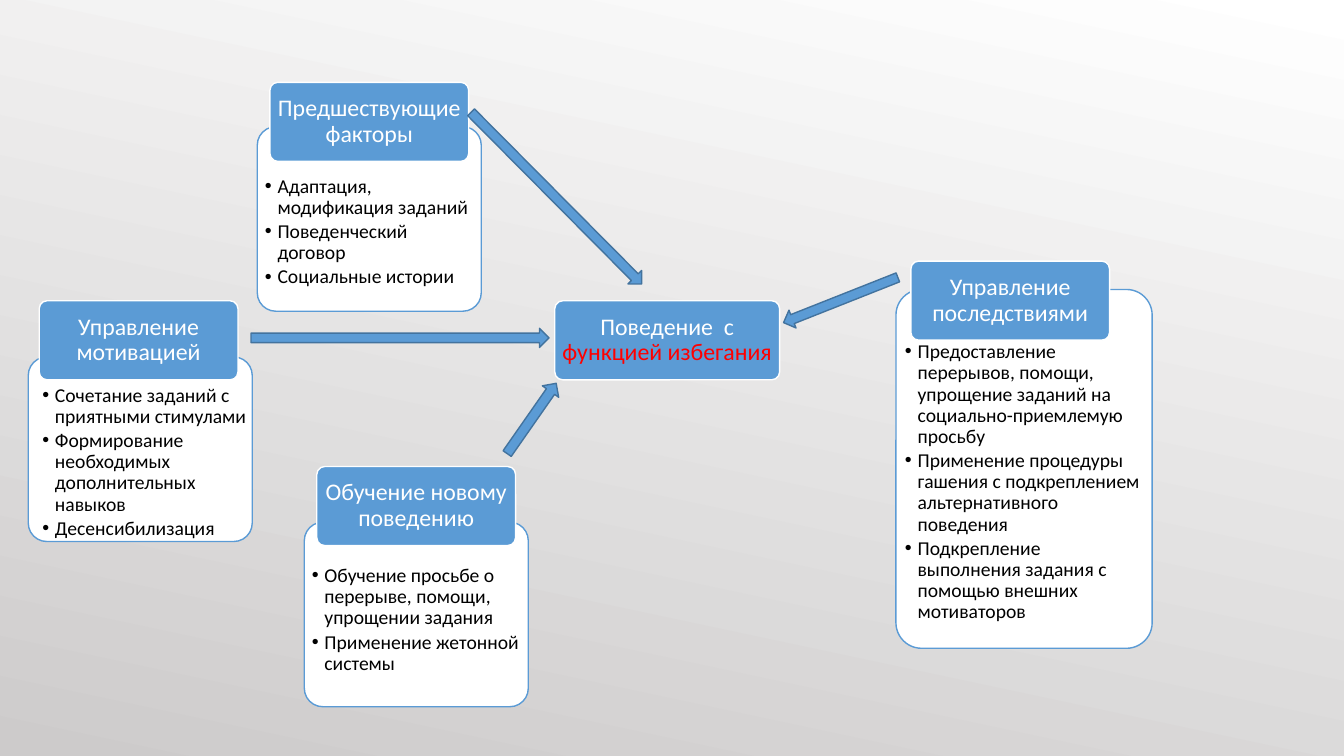
from pptx import Presentation
from pptx.dml.color import RGBColor
from pptx.enum.shapes import MSO_SHAPE
from pptx.enum.text import MSO_ANCHOR, PP_ALIGN
from pptx.oxml.ns import qn
from pptx.util import Pt
from lxml.etree import SubElement


def rgb(code):
    return RGBColor.from_string(code)


class Diagram:
    font = "Calibri"
    blue, edge, white, black, red = "5B9BD5", "43739E", "FFFFFF", "000000", "FF0000"
    header_size = 142, 56.5

    def __init__(self, slide):
        self.s = slide

    def background(self, start, end, angle):
        fill = self.s.background.fill
        fill.gradient()
        fill.gradient_angle = 360 - angle
        for stop, code in zip(fill.gradient_stops, (start, end)):
            stop.color.rgb = rgb(code)

    def shape(self, kind, box, fill, line):
        sp = self.s.shapes.add_shape(kind, *map(Pt, box))
        sp.shadow.inherit = False
        sp.fill.solid()
        sp.fill.fore_color.rgb = rgb(fill)
        sp.line.color.rgb = rgb(line)
        sp.line.width = Pt(1)
        return sp

    def rounded(self, box, fill, line):
        sp = self.shape(MSO_SHAPE.ROUNDED_RECTANGLE, box, fill, line)
        sp.adjustments[0] = 0.1
        return sp

    def frame(self, sp, side, top):
        tf = sp.text_frame
        tf.word_wrap = True
        tf.margin_left = tf.margin_right = Pt(side)
        tf.margin_top = tf.margin_bottom = Pt(top)
        return tf

    def run(self, p, text, size, color):
        r = p.add_run()
        r.text = text
        r.font.name = self.font
        r.font.size = Pt(size)
        r.font.color.rgb = rgb(color)

    def header(self, box, *runs):
        tf = self.frame(self.rounded(box, self.blue, self.white), 1, 1)
        tf.vertical_anchor = MSO_ANCHOR.MIDDLE
        p = tf.paragraphs[0]
        p.alignment = PP_ALIGN.CENTER
        p.line_spacing = 0.9
        for text, color in runs:
            self.run(p, text, 17, color)

    def bullets(self, box, items):
        tf = self.frame(self.s.shapes.add_textbox(*map(Pt, box)), 2.2, 2.2)
        for i, item in enumerate(items):
            p = tf.add_paragraph() if i else tf.paragraphs[0]
            p.line_spacing = 0.9
            p.space_after = Pt(2.1)
            pPr = p._p.get_or_add_pPr()
            pPr.set("marL", str(Pt(9)))
            pPr.set("indent", str(Pt(-9)))
            SubElement(pPr, qn("a:buFont")).set("typeface", "Arial")
            SubElement(pPr, qn("a:buChar")).set("char", "•")
            self.run(p, item, 14, self.black)

    def card(self, title, corner, panel, body, items):
        self.rounded(panel, self.white, self.blue)
        self.bullets(body, items)
        self.header(corner + self.header_size, (title, self.white))

    def arrow(self, box, rotation):
        sp = self.shape(MSO_SHAPE.RIGHT_ARROW, box, self.blue, self.edge)
        sp.rotation = rotation


CARDS = [
    ("Управление последствиями", (650.6, 186.5),
     (640, 206.8, 183, 256.3), (644.2, 241.9, 176.5, 213),
     ["Предоставление перерывов, помощи, упрощение заданий на социально-приемлемую просьбу",
      "Применение процедуры гашения с подкреплением альтернативного поведения",
      "Подкрепление выполнения задания с помощью внешних мотиваторов"]),
    ("Обучение новому поведению", (226.3, 333.2),
     (217.4, 373, 160, 131.8), (220.5, 401.8, 153.5, 97),
     ["Обучение просьбе о перерыве, помощи, упрощении задания",
      "Применение жетонной системы"]),
    ("Управление мотивацией", (28, 214.8),
     (20.2, 255, 160, 131.8), (28, 273, 153.5, 97),
     ["Сочетание заданий с приятными стимулами",
      "Формирование необходимых дополнительных навыков",
      "Десенсибилизация"]),
    ("Предшествующие факторы", (192.8, 58.8),
     (183.8, 90.5, 160, 131.8), (187, 123.8, 153.5, 97),
     ["Адаптация, модификация заданий",
      "Поведенческий договор",
      "Социальные истории"]),
]

ARROWS = [
    ((311, 134.7, 172.8, 13.7), 45.2),
    ((179.3, 234.5, 212.9, 13.7), 0),
    ((349.2, 291.8, 61.2, 14.2), 304.9),
    ((556.6, 207.4, 87.8, 13.7), 158.4),
]


def main():
    prs = Presentation()
    prs.slide_width, prs.slide_height = Pt(960), Pt(540)
    d = Diagram(prs.slides.add_slide(prs.slide_layouts[6]))
    d.background("FFFFFF", "CDCBCB", 102)
    for card in CARDS:
        d.card(*card)
    d.header((396.3, 214.8, 160.6, 56.5),
             ("Поведение  с ", d.white), ("функцией избегания", d.red))
    for box, rotation in ARROWS:
        d.arrow(box, rotation)
    prs.save("out.pptx")


if __name__ == "__main__":
    main()
